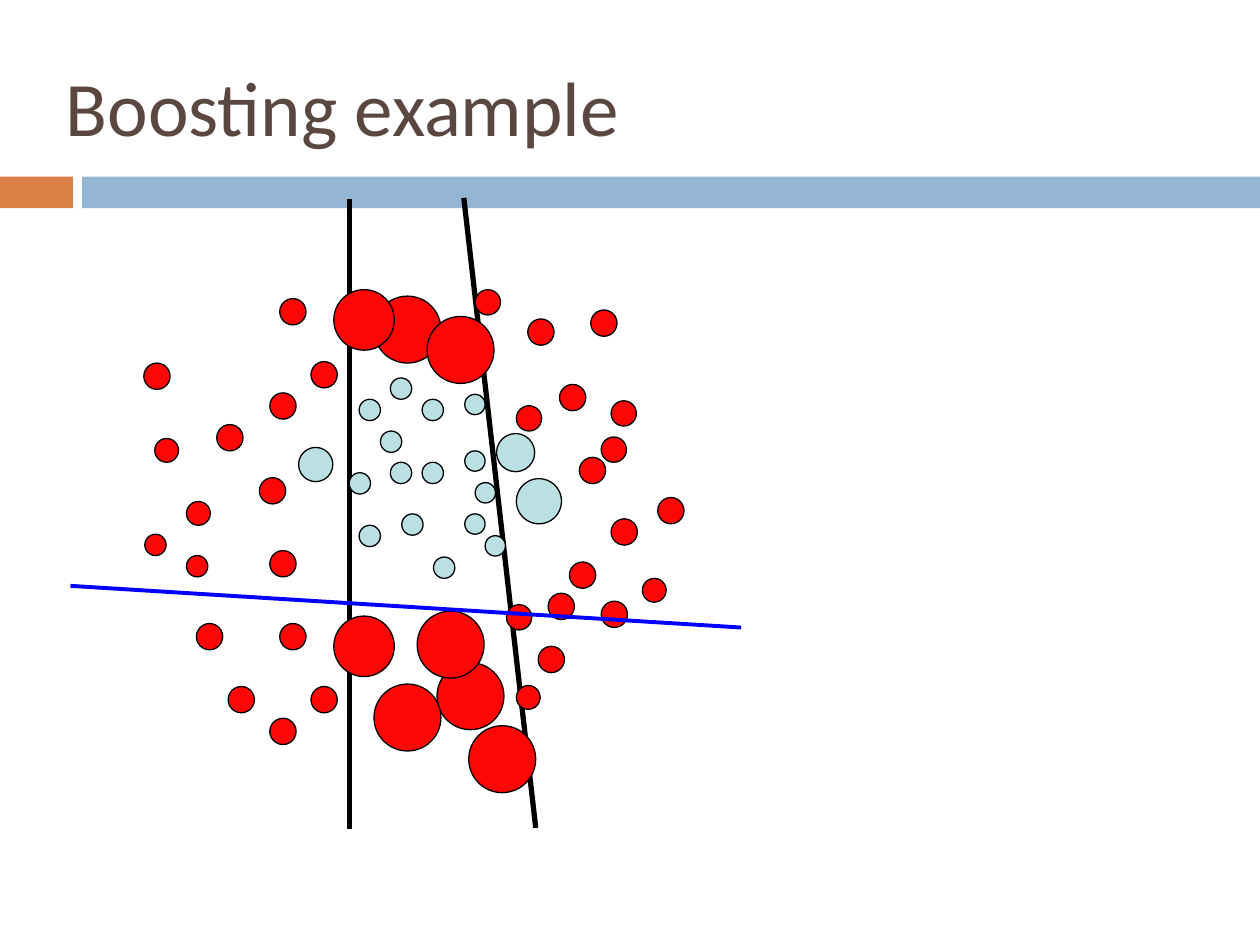
from lxml.etree import SubElement
from pptx import Presentation
from pptx.dml.color import RGBColor
from pptx.enum.shapes import MSO_CONNECTOR, MSO_SHAPE
from pptx.enum.text import MSO_ANCHOR, PP_ALIGN
from pptx.oxml.ns import qn
from pptx.util import Cm, Pt

COLOURS = {
    "title": "594740",
    "accent": "DD8047",
    "band": "94B6D2",
    "light": "BBE0E3",
    "red": "FE0606",
    "black": "000000",
    "blue": "0000FF",
}

# Diameter in cm, then the left and top of each dot of that size
LIGHT_DOTS = [
    (0.43, [(8.51, 8.05), (7.87, 9.32), (7.24, 10.59), (8.51, 9.32),
            (8.1, 10.36), (7.04, 9.53), (7.24, 8.05), (8.74, 11.23),
            (7.67, 8.69), (7.87, 7.62)]),
    (0.41, [(9.37, 7.95), (9.37, 10.36), (9.37, 9.09), (9.58, 9.73),
            (9.78, 10.8)]),
    (0.69, [(6.02, 9.02)]),
    (0.77, [(10.01, 8.74)]),
    (0.91, [(10.41, 9.65)]),
]
RED_DOTS = [
    (0.53, [(12.32, 10.46), (11.48, 11.33), (12.12, 12.12), (13.26, 10.03),
            (2.9, 7.32), (4.37, 8.56), (5.64, 12.57), (5.44, 11.1),
            (5.44, 14.48), (6.27, 13.84), (5.64, 6.02), (5.44, 7.92),
            (6.27, 7.29), (10.64, 6.43), (11.91, 6.25), (11.28, 7.75),
            (3.96, 12.57), (5.23, 9.63), (4.6, 13.84), (11.68, 9.22),
            (10.85, 13.03), (11.05, 11.96)]),
    (0.51, [(12.12, 8.81), (10.41, 8.18), (9.58, 5.84), (12.32, 8.08),
            (10.21, 12.19)]),
    (0.48, [(12.95, 11.66), (3.12, 8.84), (3.76, 10.11), (10.41, 13.82)]),
    (0.43, [(2.92, 10.77), (3.76, 11.2)]),
    (1.35, [(8.81, 13.36), (8.41, 12.32), (7.54, 13.79), (9.45, 14.63),
            (7.54, 5.97), (8.61, 6.38)]),
    (1.22, [(6.73, 12.42), (6.73, 5.84)]),
]


def rgb(name):
    return RGBColor.from_string(COLOURS[name])


def set_attributes(target, values):
    for name, value in values.items():
        setattr(target, name, value)


def add_title(s, text):
    title = s.shapes.title
    set_attributes(title, {"left": Cm(1.07), "top": Cm(0.64),
                           "width": Cm(22.86), "height": Cm(3.18)})
    tf = title.text_frame
    set_attributes(tf, {"text": text, "word_wrap": True,
                        "vertical_anchor": MSO_ANCHOR.MIDDLE})
    p = tf.paragraphs[0]
    set_attributes(p, {"alignment": PP_ALIGN.LEFT, "line_spacing": 0.93})
    font = p.runs[0].font
    set_attributes(font, {"name": "Calibri", "size": Pt(44)})
    font.color.rgb = rgb("title")


def add_filled(s, kind, box, fill):
    sp = s.shapes.add_shape(kind, *map(Cm, box))
    sp.shadow.inherit = False
    sp.fill.solid()
    sp.fill.fore_color.rgb = rgb(fill)
    sp.line.fill.background()
    return sp


def add_dots(s, groups, fill):
    for size, corners in groups:
        for left, top in corners:
            dot = add_filled(s, MSO_SHAPE.OVAL, (left, top, size, size), fill)
            dot.line.color.rgb = rgb("black")
            dot.line.width = Pt(0.75)


def add_boundary(s, start, end, colour, width):
    """Draw one weak learner's decision boundary."""
    line = s.shapes.add_connector(MSO_CONNECTOR.STRAIGHT,
                                  *map(Cm, start + end))
    line.line.color.rgb = rgb(colour)
    line.line.width = Pt(width)
    SubElement(line._element.spPr, qn("a:effectLst"))


def main():
    prs = Presentation()
    set_attributes(prs, {"slide_width": Cm(25.4), "slide_height": Cm(19.05)})
    s = prs.slides.add_slide(prs.slide_layouts[5])

    add_filled(s, MSO_SHAPE.RECTANGLE, (0, 3.56, 1.47, 0.64), "accent")
    add_filled(s, MSO_SHAPE.RECTANGLE, (1.65, 3.56, 23.75, 0.64), "band")
    add_title(s, "Boosting example")

    add_boundary(s, (7.04, 4.01), (7.04, 16.71), "black", 3)
    add_boundary(s, (9.35, 3.99), (10.8, 16.69), "black", 3)
    add_dots(s, LIGHT_DOTS, "light")
    add_dots(s, RED_DOTS, "red")
    add_boundary(s, (1.42, 11.81), (14.94, 12.65), "blue", 2.25)

    prs.save("out.pptx")


if __name__ == "__main__":
    main()
